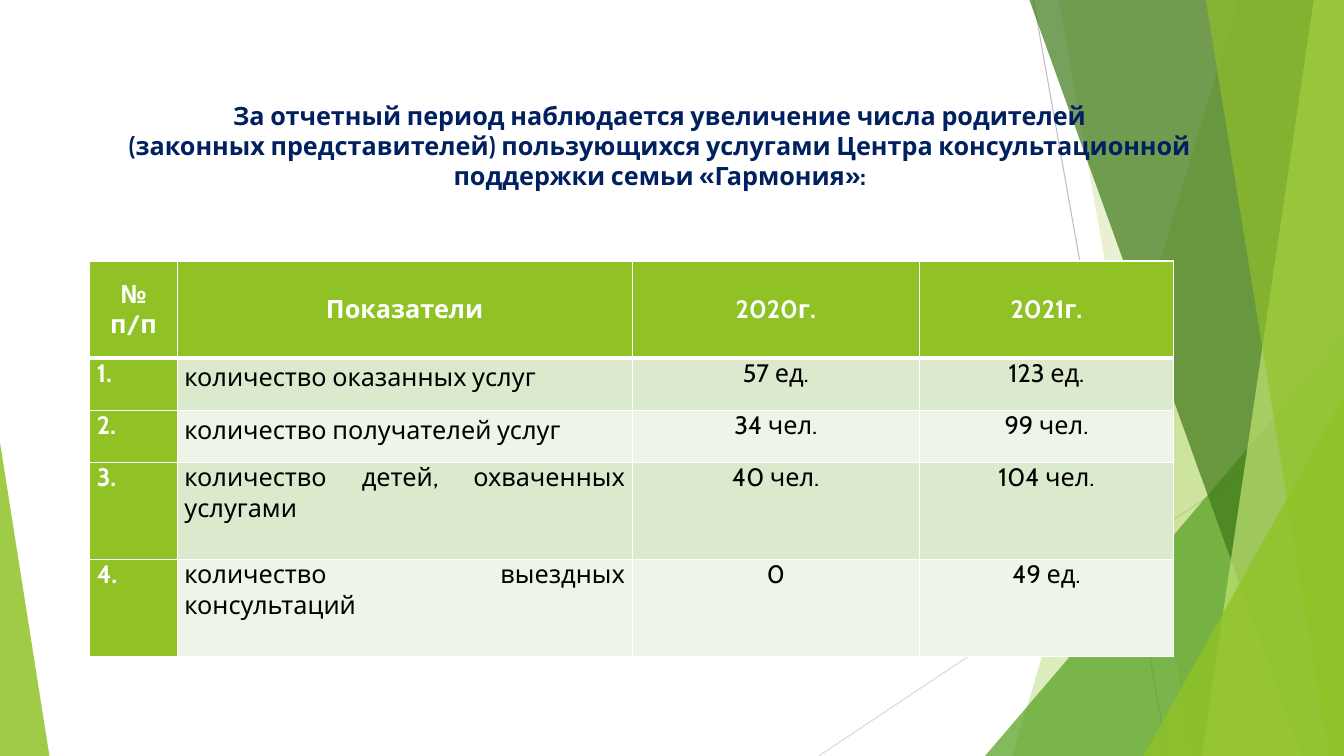
from dataclasses import dataclass

from lxml import etree
from pptx import Presentation
from pptx.dml.color import RGBColor
from pptx.enum.shapes import MSO_CONNECTOR, MSO_SHAPE
from pptx.enum.text import MSO_ANCHOR, PP_ALIGN
from pptx.oxml.ns import qn
from pptx.util import Inches, Pt

STRAIGHT = MSO_CONNECTOR.STRAIGHT
TRIANGLE = MSO_SHAPE.ISOSCELES_TRIANGLE
TOP, MIDDLE = MSO_ANCHOR.TOP, MSO_ANCHOR.MIDDLE
CENTER, JUSTIFY = PP_ALIGN.CENTER, PP_ALIGN.JUSTIFY


@dataclass(frozen=True)
class Theme:
    font: str = "Cabin"
    size: int = 18
    navy: str = "002060"
    black: str = "000000"
    white: str = "FFFFFF"
    lime: str = "90C226"
    green: str = "54A021"
    forest: str = "3F7819"
    pale: str = "C0E474"
    bands: tuple = ("DBE9CD", "EEF4E8")
    rays: tuple = ("BFBFBF", "D9D9D9")


theme = Theme()
WIDTH, HEIGHT = 13.33, 7.5


def paint(facet, color, opacity):
    facet.shadow.inherit = False
    facet.line.fill.background()
    facet.fill.solid()
    facet.fill.fore_color.rgb = RGBColor.from_string(color)
    tint = facet.element.spPr.find(qn("a:solidFill"))[0]
    etree.SubElement(tint, qn("a:alpha"), val=str(opacity * 1000))


def style_paragraph(paragraph, color, bold, align):
    paragraph.alignment = align
    for run in paragraph.runs:
        run.font.name = theme.font
        run.font.size = Pt(theme.size)
        run.font.bold = bold
        run.font.color.rgb = RGBColor.from_string(color)


deck = Presentation()
deck.slide_width, deck.slide_height = Inches(WIDTH), Inches(HEIGHT)
slide = deck.slides.add_slide(deck.slide_layouts[5])
shapes = slide.shapes

ray_ends = [(10.25, 0, 11.58, HEIGHT), (WIDTH, 4.03, 8.12, HEIGHT)]
for ends, color in zip(ray_ends, theme.rays):
    ray = shapes.add_connector(STRAIGHT, *map(Inches, ends))
    ray.line.color.rgb = RGBColor.from_string(color)
    ray.line.width = Pt(0.75)
    etree.SubElement(ray.element.spPr, qn("a:effectLst"))

bands = [
    (12.28, 10.04, theme.lime, 30),
    (10.5, 11.83, theme.lime, 20),
    (10.21, 12.91, theme.forest, 70),
    (13.03, 11.92, theme.pale, 70),
    (11.96, 13.18, theme.lime, 65),
]
corners = [
    (9.77, 3.33, WIDTH - 9.77, 1, theme.green, 72),
    (11.34, 3.93, WIDTH - 11.34, 1, theme.lime, 80),
    (0, 4.39, 0.49, 0, theme.lime, 85),
]


for position, (top_x, bottom_x, color, opacity) in enumerate(bands):
    if position == 2:
        left, top, width, apex, corner_color, corner_opacity = corners[0]
        corner = shapes.add_shape(
            TRIANGLE, *map(Inches, (left, top, width, HEIGHT - top)))
        corner.adjustments[0] = apex
        paint(corner, corner_color, corner_opacity)
    outline = shapes.build_freeform(Inches(top_x), 0)
    outline.add_line_segments([
        (Inches(WIDTH), 0),
        (Inches(WIDTH), Inches(HEIGHT)),
        (Inches(bottom_x), Inches(HEIGHT)),
    ])
    paint(outline.convert_to_shape(), color, opacity)

for left, top, width, apex, color, opacity in corners[1:]:
    corner = shapes.add_shape(
        TRIANGLE, *map(Inches, (left, top, width, HEIGHT - top)))
    corner.adjustments[0] = apex
    paint(corner, color, opacity)

indicators = [
    ("№ п/п", "Показатели", "2020г.", "2021г."),
    ("1.", "количество оказанных услуг", "57 ед.", "123 ед."),
    ("2.", "количество получателей услуг", "34 чел.", "99 чел."),
    ("3.", "количество детей, охваченных услугами", "40 чел.", "104 чел."),
    ("4.", "количество выездных консультаций", "0", "49 ед."),
]
column_widths = [0.87, 4.51, 2.85, 2.52]
row_heights = [0.96, 0.52, 0.52, 0.96, 0.96]

table = shapes.add_table(
    len(row_heights), len(column_widths), Inches(0.89), Inches(2.59),
    Inches(sum(column_widths)), Inches(sum(row_heights))).table
for column, width in zip(table.columns, column_widths):
    column.width = Inches(width)
for row, height in zip(table.rows, row_heights):
    row.height = Inches(height)

for r, values in enumerate(indicators):
    for c, value in enumerate(values):
        cell = table.cell(r, c)
        heading = r == 0 or c == 0
        cell.text_frame.text = value
        cell.margin_left = cell.margin_right = Inches(0.07)
        cell.margin_top = cell.margin_bottom = 0
        cell.vertical_anchor = MIDDLE if r == 0 else TOP
        paragraph = cell.text_frame.paragraphs[0]
        style_paragraph(paragraph, theme.white if heading else theme.black,
                        heading, JUSTIFY if r and c < 2 else CENTER)
        if c == 1 and r in (1, 2):
            paragraph.line_spacing = 1.15
        cell_properties = cell._tc.get_or_add_tcPr()
        for side in ("L", "R", "T", "B"):
            thick = (side == "B" and r == 0) or (side == "T" and r == 1)
            border = etree.SubElement(cell_properties, qn(f"a:ln{side}"),
                                      w=str(Pt(3 if thick else 1)))
            stroke = etree.SubElement(border, qn("a:solidFill"))
            etree.SubElement(stroke, qn("a:srgbClr"), val=theme.white)
        cell.fill.solid()
        cell.fill.fore_color.rgb = RGBColor.from_string(
            theme.lime if heading else theme.bands[(r - 1) % 2])

title = shapes.title
title.left, title.top, title.width, title.height = map(
    Inches, (1.01, 0.94, 11.07, 1.01))
title.text_frame.text = (
    "За отчетный период наблюдается увеличение числа родителей\n"
    "(законных представителей) пользующихся услугами Центра "
    "консультационной поддержки семьи «Гармония»:")
title.text_frame.word_wrap = True
title.text_frame.vertical_anchor = MIDDLE
for paragraph in title.text_frame.paragraphs:
    style_paragraph(paragraph, theme.navy, True, CENTER)
title.element.getparent().append(title.element)

deck.save("out.pptx")
